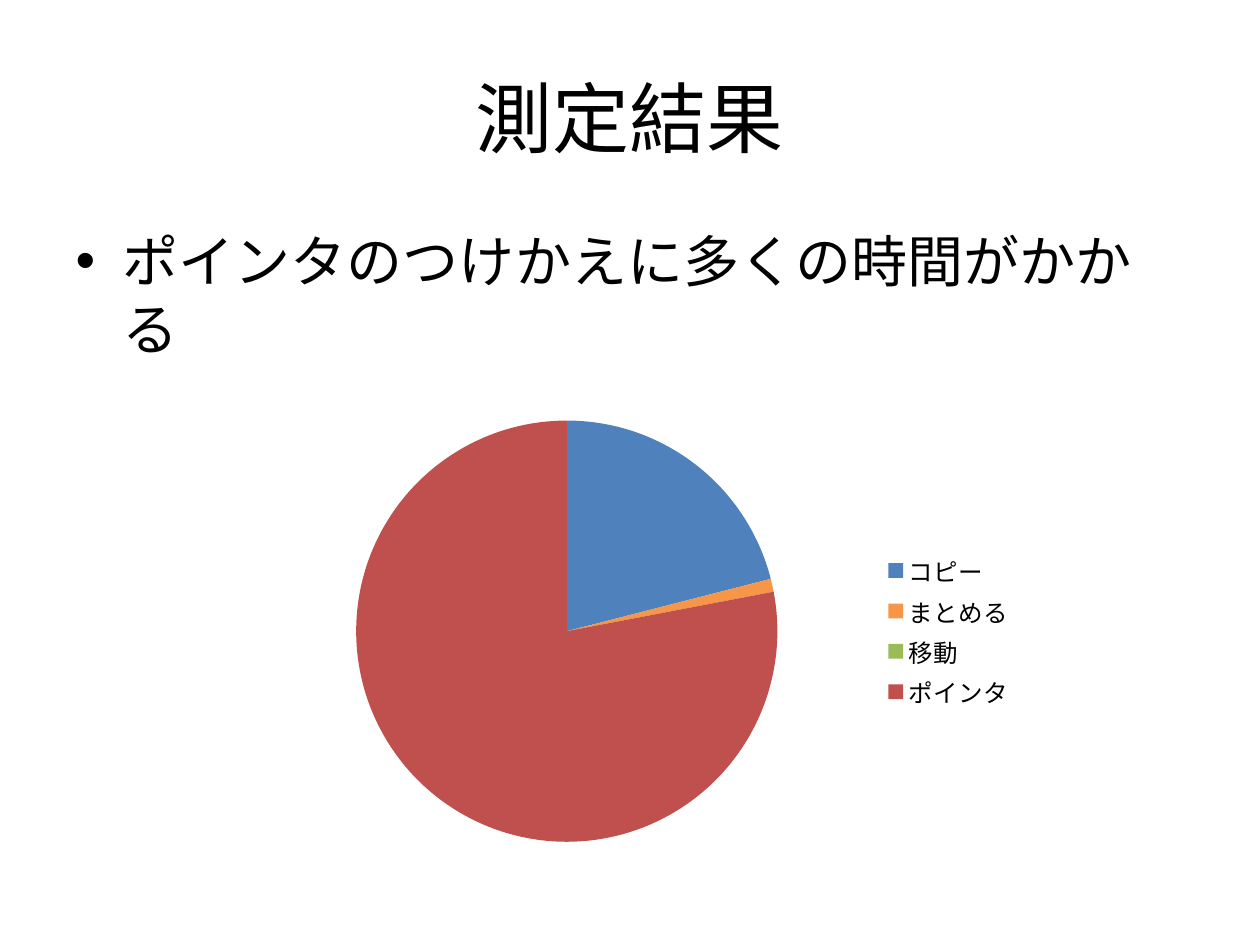
"""Build the measurement result slide with a pie chart of time shares."""
from dataclasses import dataclass

from pptx import Presentation
from pptx.chart.data import CategoryChartData
from pptx.dml.color import RGBColor
from pptx.enum.chart import XL_CHART_TYPE, XL_LEGEND_POSITION
from pptx.enum.text import MSO_ANCHOR, PP_ALIGN
from pptx.util import Pt

COLORS = {
    "text": "000000",
    "blue": "4F81BD",
    "orange": "F79646",
    "green": "9BBB59",
    "red": "C0504D",
}


@dataclass(frozen=True)
class Box:
    left: float
    top: float
    width: float
    height: float


@dataclass(frozen=True)
class Share:
    label: str
    value: int
    color: str


SHARES = [
    Share("コピー", 21, "blue"),
    Share("まとめる", 1, "orange"),
    Share("移動", 0, "green"),
    Share("ポインタ", 78, "red"),
]


def rgb(name: str) -> RGBColor:
    return RGBColor.from_string(COLORS[name])


def set_font(font, name: str, size: float) -> None:
    font.name = name
    font.size = Pt(size)
    font.color.rgb = rgb("text")


def fill_placeholder(placeholder, box: Box, text: str, size: float):
    placeholder.left, placeholder.top = Pt(box.left), Pt(box.top)
    placeholder.width, placeholder.height = Pt(box.width), Pt(box.height)
    placeholder.text_frame.text = text
    paragraph = placeholder.text_frame.paragraphs[0]
    set_font(paragraph.font, "Calibri", size)
    return paragraph


def add_pie(slide, box: Box, shares: list[Share]) -> None:
    data = CategoryChartData()
    data.categories = [share.label for share in shares]
    data.add_series("Series 1", [share.value for share in shares])
    chart = slide.shapes.add_chart(
        XL_CHART_TYPE.PIE, Pt(box.left), Pt(box.top), Pt(box.width), Pt(box.height), data
    ).chart
    chart.has_title = False
    set_font(chart.font, "Calibri", 10)
    chart.has_legend = True
    chart.legend.position = XL_LEGEND_POSITION.RIGHT
    chart.legend.include_in_layout = False
    set_font(chart.legend.font, "Noto Sans CJK JP", 14)
    plot = chart.plots[0]
    plot.vary_by_categories = True
    for index, share in enumerate(shares):
        fill = plot.series[0].points[index].format.fill
        fill.solid()
        fill.fore_color.rgb = rgb(share.color)


def main() -> None:
    presentation = Presentation()
    presentation.slide_width, presentation.slide_height = Pt(720), Pt(540)
    slide = presentation.slides.add_slide(presentation.slide_layouts[1])
    title = slide.shapes.title
    heading = fill_placeholder(title, Box(36, 21.6, 648, 90), "測定結果", 44)
    heading.alignment = PP_ALIGN.CENTER
    title.text_frame.vertical_anchor = MSO_ANCHOR.MIDDLE
    fill_placeholder(
        slide.placeholders[1],
        Box(36, 126, 648, 98.6),
        "ポインタのつけかえに多くの時間がかかる",
        32,
    )
    add_pie(slide, Box(144.7, 230.4, 442, 260.6), SHARES)
    presentation.save("out.pptx")


if __name__ == "__main__":
    main()
